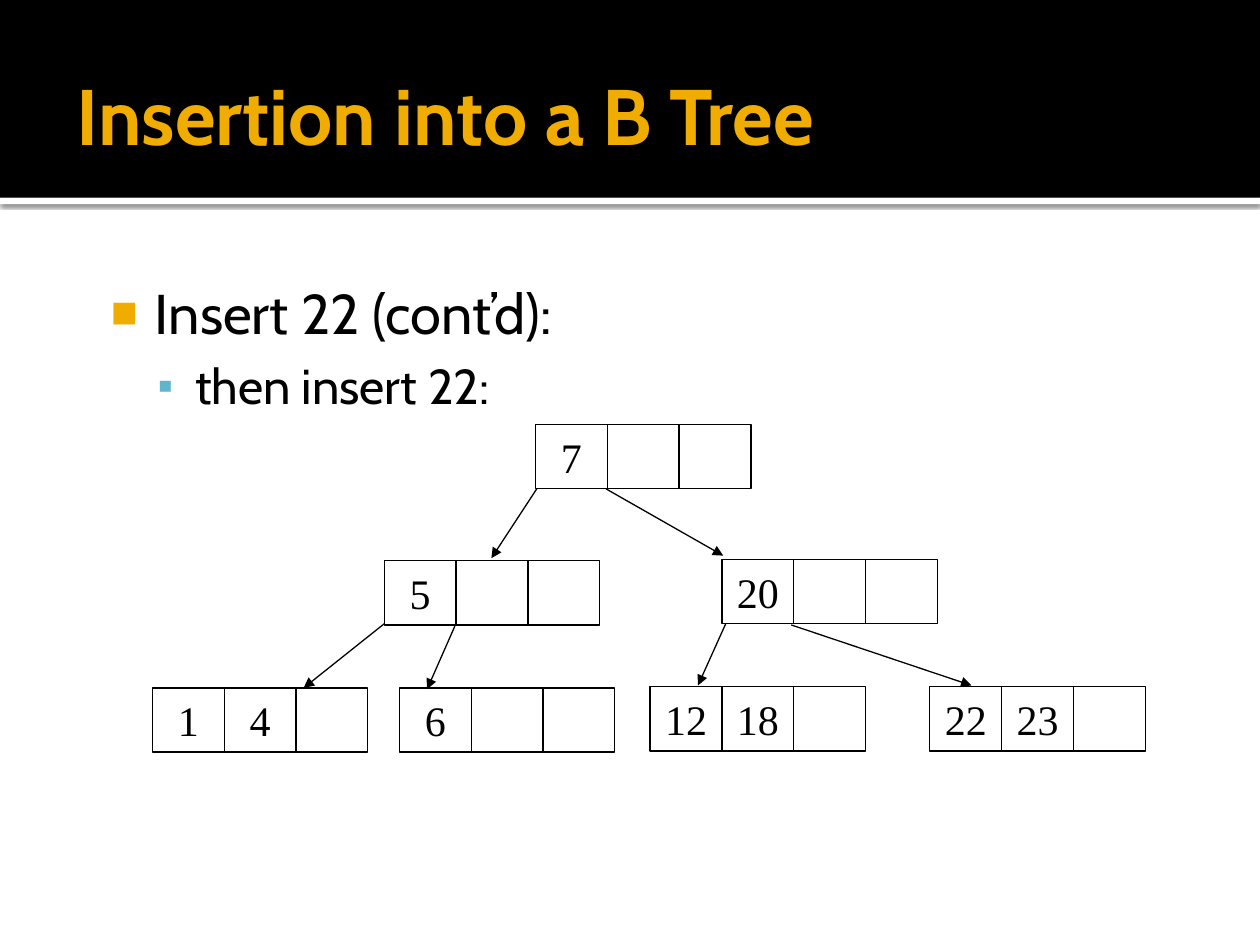
"""Build a slide that shows the last step of an insertion into a B tree."""
from typing import NamedTuple

from lxml.etree import SubElement as Sub
from pptx import Presentation
from pptx.dml.color import RGBColor
from pptx.enum.shapes import MSO_CONNECTOR as Conn, MSO_SHAPE as Kind
from pptx.enum.text import MSO_ANCHOR as Anchor, MSO_AUTO_SIZE as Fit, PP_ALIGN as Align
from pptx.oxml.ns import qn
from pptx.util import Inches, Pt

BLACK = RGBColor(0, 0, 0)
WHITE = RGBColor(0xFF, 0xFF, 0xFF)
GOLD = RGBColor(0xF0, 0xAD, 0x00)
BLUE = RGBColor(0x60, 0xB5, 0xCC)
SANS, SERIF = "Cabin", "Times New Roman"
CELL_W, CELL_H, SLOTS = 0.57, 0.51, 3


class Node(NamedTuple):
    left: float
    top: float
    keys: tuple


class Edge(NamedTuple):
    x1: float
    y1: float
    x2: float
    y2: float


class Item(NamedTuple):
    text: str
    size: int
    mark: str
    color: RGBColor
    scale: int
    left: float
    hang: float
    gap: float


NODES = [
    Node(4.25, 3.37, ("7",)),
    Node(3.05, 4.45, ("5",)),
    Node(5.73, 4.44, ("20",)),
    Node(1.21, 5.46, ("1", "4")),
    Node(3.17, 5.46, ("6",)),
    Node(5.16, 5.45, ("12", "18")),
    Node(7.38, 5.45, ("22", "23")),
]
EDGES = [
    Edge(4.26, 3.88, 3.9, 4.43),
    Edge(4.81, 3.88, 5.74, 4.41),
    Edge(3.05, 4.95, 2.41, 5.46),
    Edge(3.61, 4.97, 3.39, 5.47),
    Edge(5.76, 4.95, 5.54, 5.44),
    Edge(6.28, 4.96, 7.71, 5.44),
]
ITEMS = [
    Item("Insert 22 (cont’d):", 32, "■", GOLD, 80, 0.48, 0.35, 0),
    Item("then insert 22:", 28, "▪", BLUE, 90, 0.8, 0.3, 5.6),
]


def place(shape, left: float, top: float, width: float, height: float) -> None:
    shape.left, shape.top = Inches(left), Inches(top)
    shape.width, shape.height = Inches(width), Inches(height)


def pad(frame, left: float, top: float, right: float, base: float) -> None:
    frame.margin_left, frame.margin_top = Inches(left), Inches(top)
    frame.margin_right, frame.margin_bottom = Inches(right), Inches(base)
    frame.auto_size = Fit.NONE


def style(par, name: str, size: int, color: RGBColor, bold: bool = False) -> None:
    for run in par.runs:
        font = run.font
        font.name, font.size, font.bold = name, Pt(size), bold
        font.color.rgb = color


def draw_band(slide, top: float, height: float, color: RGBColor):
    band = slide.shapes.add_shape(
        Kind.RECTANGLE, 0, Inches(top), Inches(10), Inches(height))
    band.shadow.inherit = False
    band.fill.solid()
    band.fill.fore_color.rgb = color
    band.line.fill.background()
    slide.shapes.title.element.addprevious(band.element)
    return band


def add_shade(band) -> None:
    glow = band.element.spPr.find(qn("a:effectLst"))
    shade = Sub(glow, qn("a:outerShdw"), blurRad=str(Pt(2.5)), dist=str(Pt(0.8)),
                dir="5400000", algn="t", rotWithShape="0")
    tint = Sub(shade, qn("a:srgbClr"), val=str(BLACK))
    Sub(tint, qn("a:alpha"), val="60000")


def fill_title(title) -> None:
    place(title, 0.51, 0.28, 8.97, 1.25)
    frame = title.text_frame
    frame.text = "Insertion into a B Tree"
    pad(frame, 0.1, 0.05, 0.05, 0.05)
    frame.vertical_anchor = Anchor.MIDDLE
    par = frame.paragraphs[0]
    par.alignment = Align.LEFT
    style(par, SANS, 45, GOLD, True)


def fill_list(body) -> None:
    place(body, 0.69, 2.11, 9.01, 4.9)
    frame = body.text_frame
    frame.text = "\n".join(item.text for item in ITEMS)
    pad(frame, 0.06, 0.1, 0.1, 0.05)
    for level, (par, item) in enumerate(zip(frame.paragraphs, ITEMS)):
        par.level = level
        par.space_before = Pt(item.gap)
        style(par, SANS, item.size, BLACK)
        props = par._p.get_or_add_pPr()
        props.set("marL", str(Inches(item.left)))
        props.set("indent", str(-Inches(item.hang)))
        Sub(Sub(props, qn("a:buClr")), qn("a:srgbClr"), val=str(item.color))
        Sub(props, qn("a:buSzPct"), val=str(item.scale * 1000))
        Sub(props, qn("a:buChar"), char=item.mark)


def draw_node(slide, node: Node) -> None:
    for slot in range(SLOTS):
        cell = slide.shapes.add_shape(
            Kind.RECTANGLE, Inches(node.left + slot * CELL_W), Inches(node.top),
            Inches(CELL_W), Inches(CELL_H))
        cell.shadow.inherit = False
        cell.fill.background()
        cell.line.color.rgb = BLACK
        cell.line.width = Pt(0.75)
        if slot < len(node.keys):
            frame = cell.text_frame
            frame.text = node.keys[slot]
            par = frame.paragraphs[0]
            par.alignment = Align.CENTER
            style(par, SERIF, 24, BLACK)


def draw_edge(slide, edge: Edge) -> None:
    line = slide.shapes.add_connector(Conn.STRAIGHT, *map(Inches, edge))
    line.line.color.rgb = BLACK
    line.line.width = Pt(0.75)
    props = line.element.spPr
    Sub(props.find(qn("a:ln")), qn("a:tailEnd"), type="triangle")
    Sub(props, qn("a:effectLst"))


def main() -> None:
    deck = Presentation()
    deck.slide_width, deck.slide_height = Inches(10), Inches(7.5)
    slide = deck.slides.add_slide(deck.slide_layouts[1])
    add_shade(draw_band(slide, 1.57, 0.05, WHITE))
    draw_band(slide, 0, 1.57, BLACK)
    fill_title(slide.shapes.title)
    fill_list(slide.placeholders[1])
    for node in NODES:
        draw_node(slide, node)
    for edge in EDGES:
        draw_edge(slide, edge)
    deck.save("out.pptx")


if __name__ == "__main__":
    main()
